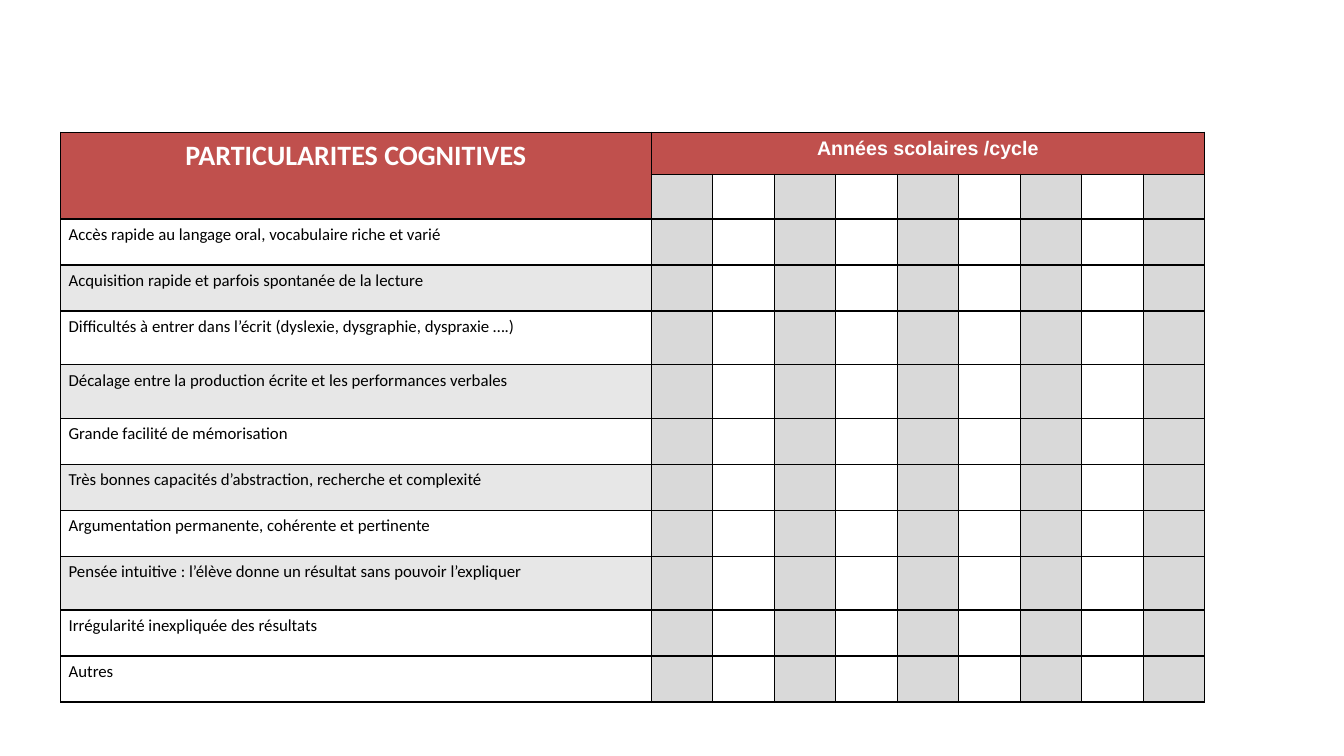
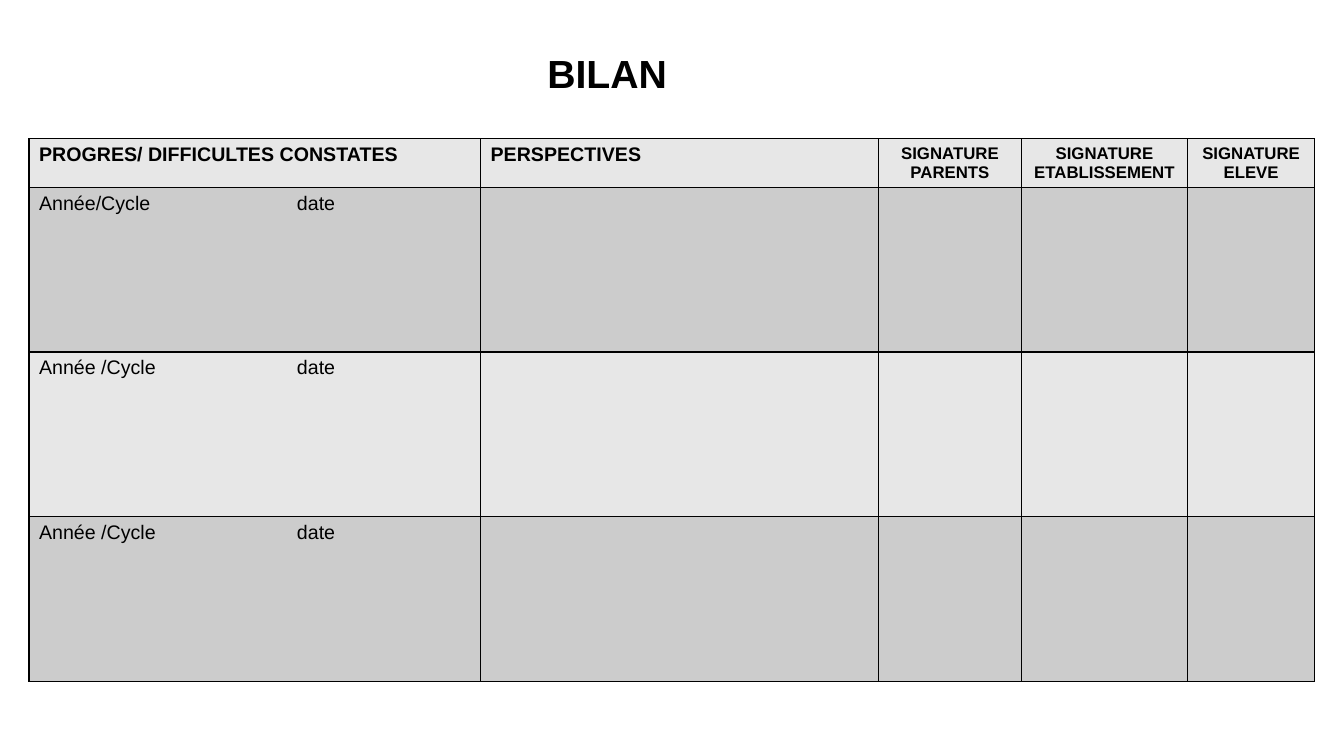
from lxml.etree import SubElement
from pptx import Presentation
from pptx.dml.color import RGBColor
from pptx.enum.text import MSO_ANCHOR, PP_ALIGN
from pptx.oxml.ns import qn
from pptx.util import Cm, Pt

BLACK = RGBColor(0x00, 0x00, 0x00)
WHITE = RGBColor(0xFF, 0xFF, 0xFF)
RED = RGBColor(0xC0, 0x50, 0x4D)
LIGHT_GREY = RGBColor(0xE7, 0xE7, 0xE7)
COLUMN_GREY = RGBColor(0xD9, 0xD9, 0xD9)
DARK_GREY = RGBColor(0xCC, 0xCC, 0xCC)

TITLE_ONLY, BLANK = 5, 6
YEAR_COUNT = 9
LOW_ROW, HIGH_ROW = 1.16, 1.35

COGNITIVE_TRAITS = [
    ("Accès rapide au langage oral, vocabulaire riche et varié", LOW_ROW),
    ("Acquisition rapide et parfois spontanée de la lecture", LOW_ROW),
    ("Difficultés à entrer dans l’écrit (dyslexie, dysgraphie, dyspraxie ….)", HIGH_ROW),
    ("Décalage entre la production écrite et les performances verbales", HIGH_ROW),
    ("Grande facilité de mémorisation", LOW_ROW),
    ("Très bonnes capacités d’abstraction, recherche et complexité", LOW_ROW),
    ("Argumentation permanente, cohérente et pertinente", LOW_ROW),
    ("Pensée intuitive : l’élève donne un résultat sans pouvoir l’expliquer", HIGH_ROW),
    ("Irrégularité inexpliquée des résultats", LOW_ROW),
    ("Autres", LOW_ROW),
]

REVIEW_HEADERS = [
    ("PROGRES/ DIFFICULTES CONSTATES", 14, PP_ALIGN.LEFT),
    ("PERSPECTIVES", 14, PP_ALIGN.LEFT),
    ("SIGNATURE PARENTS", 12, PP_ALIGN.CENTER),
    ("SIGNATURE\nETABLISSEMENT", 12, PP_ALIGN.CENTER),
    ("SIGNATURE\nELEVE", 12, PP_ALIGN.CENTER),
]
REVIEW_PERIODS = ["Année/Cycle\tdate", "Année /Cycle\tdate", "Année /Cycle\tdate"]


class Deck:
    """Holds the shared style and the slide being filled."""

    font_name = "Arial"
    border_width = Pt(1)

    def __init__(self):
        self.presentation = Presentation()
        self.presentation.slide_width = Cm(33.87)
        self.presentation.slide_height = Cm(19.05)
        self.slide = None

    def add_slide(self, layout):
        self.slide = self.presentation.slides.add_slide(
            self.presentation.slide_layouts[layout])

    def format_text(self, frame, text, size, color=BLACK, bold=False,
                    align=PP_ALIGN.LEFT, font_name=font_name, spacing=1.0):
        frame.text = text
        for paragraph in frame.paragraphs:
            paragraph.alignment = align
            paragraph.line_spacing = spacing
            font = paragraph.font
            font.name, font.size, font.bold = font_name, Pt(size), bold
            font.color.rgb = color

    def title(self, text, left, top, width, height):
        shape = self.slide.shapes.title
        shape.left, shape.top, shape.width, shape.height = map(
            Cm, (left, top, width, height))
        shape.text_frame.vertical_anchor = MSO_ANCHOR.TOP
        self.format_text(shape.text_frame, text, 28, bold=True)

    def table(self, left, top, widths, heights):
        frame = self.slide.shapes.add_table(
            len(heights), len(widths), Cm(left), Cm(top),
            Cm(sum(widths)), Cm(sum(heights)))
        table = frame.table
        table.first_row = table.horz_banding = False
        for column, width in zip(table.columns, widths):
            column.width = Cm(width)
        for row, height in zip(table.rows, heights):
            row.height = Cm(height)
        for cell in table.iter_cells():
            self.border(cell)
        return table

    def border(self, cell):
        properties = cell._tc.get_or_add_tcPr()
        for side in ("a:lnL", "a:lnR", "a:lnT", "a:lnB"):
            line = SubElement(properties, qn(side), w=str(self.border_width))
            fill = SubElement(line, qn("a:solidFill"))
            SubElement(fill, qn("a:srgbClr"), val=str(BLACK))

    def fill(self, cell, color=None):
        if color is None:
            cell.fill.background()
        else:
            cell.fill.solid()
            cell.fill.fore_color.rgb = color

    def tight_text(self, cell, text, size, **style):
        """Write a cell with narrow margins and slightly open lines."""
        cell.margin_left = cell.margin_right = Cm(0.2)
        cell.margin_top = cell.margin_bottom = Cm(0.1)
        self.format_text(cell.text_frame, text, size, spacing=1.07, **style)

    def tab_stop(self, paragraph, position):
        stops = SubElement(paragraph._p.get_or_add_pPr(), qn("a:tabLst"))
        SubElement(stops, qn("a:tab"), pos=str(Cm(position)), algn="l")
        # The schema wants the tab list ahead of the default run properties.
        defaults = paragraph._p.pPr.find(qn("a:defRPr"))
        if defaults is not None:
            defaults.addprevious(stops)


def cognitive_slide(deck):
    deck.add_slide(BLANK)
    heights = [1.06, 1.13] + [height for _, height in COGNITIVE_TRAITS]
    table = deck.table(1.53, 3.33, [14.88] + [1.55] * YEAR_COUNT, heights)

    heading, years = table.cell(0, 0), table.cell(0, 1)
    heading.merge(table.cell(1, 0))
    years.merge(table.cell(0, YEAR_COUNT))
    for cell in (heading, years):
        deck.fill(cell, RED)
    header_style = dict(color=WHITE, bold=True, align=PP_ALIGN.CENTER)
    deck.tight_text(heading, "PARTICULARITES COGNITIVES", 20,
                    font_name="Calibri", **header_style)
    deck.tight_text(years, "Années scolaires /cycle", 14, **header_style)

    for row in range(1, len(heights)):
        for column in range(1, YEAR_COUNT + 1):
            deck.fill(table.cell(row, column), COLUMN_GREY if column % 2 else None)

    last_trait = len(COGNITIVE_TRAITS) - 1
    for index, (trait, _) in enumerate(COGNITIVE_TRAITS):
        cell = table.cell(index + 2, 0)
        shaded = index % 2 and index != last_trait
        deck.fill(cell, LIGHT_GREY if shaded else WHITE)
        deck.tight_text(cell, trait, 12, font_name="Calibri")


def review_slide(deck):
    deck.add_slide(TITLE_ONLY)
    deck.title("BILAN", 13.54, 1.12, 10.2, 1.45)
    table = deck.table(0.73, 3.5, [11.38, 10.03, 3.6, 4.19, 3.2],
                       [1.22] + [4.15] * len(REVIEW_PERIODS))

    for row_index, row in enumerate(table.rows):
        for cell in row.cells:
            deck.fill(cell, DARK_GREY if row_index % 2 else LIGHT_GREY)
    for column, (text, size, align) in enumerate(REVIEW_HEADERS):
        deck.format_text(table.cell(0, column).text_frame, text, size,
                         bold=True, align=align)
    for row_index, period in enumerate(REVIEW_PERIODS, start=1):
        frame = table.cell(row_index, 0).text_frame
        deck.format_text(frame, period, 14)
        deck.tab_stop(frame.paragraphs[0], 6.5)


def main():
    deck = Deck()
    cognitive_slide(deck)
    review_slide(deck)
    deck.presentation.save("out.pptx")


if __name__ == "__main__":
    main()
